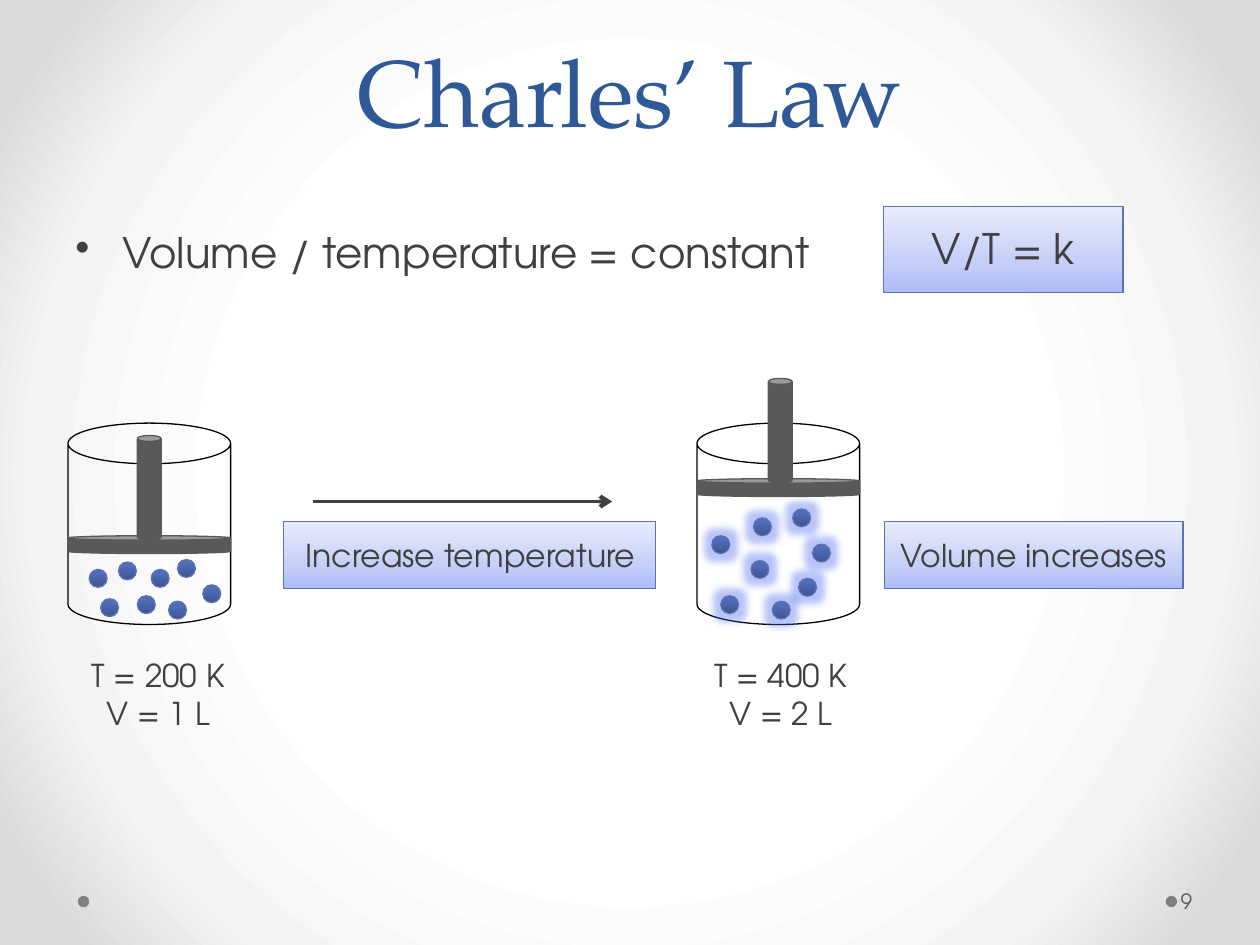
from dataclasses import dataclass

from lxml import etree
from pptx import Presentation
from pptx import util as u
from pptx.dml.color import RGBColor
from pptx.enum import shapes, text
from pptx.oxml.ns import nsdecls, qn


@dataclass(frozen=True)
class Theme:
    heading: str = "TeX Gyre Pagella"
    body: str = "TeX Gyre Adventor"
    title: str = "2F5897"
    ink: str = "404040"
    steel: str = "595959"
    dot: str = "808080"
    outline: str = "000000"
    edge: str = "5C72B2"
    glow: str = "4F6CF0"
    panel: tuple = ((0, "ADBBF6"), (35, "C5CFF8"), (100, "E8ECFD"))
    particle: tuple = ((0, "3E5490"), (80, "516DBB"), (100, "4F6CBE"))
    backdrop: tuple = ((50, "FFFFFF"), (76, "F4F4F4"), (92, "DADADA"))
    title_size: int = 54
    large: int = 24
    medium: int = 18
    small: int = 12


theme = Theme()
UPWARD = '<a:lin ang="16200000" scaled="0"/>'
RADIAL = '<a:path path="circle"><a:fillToRect l="50000" t="50000" r="50000" b="50000"/></a:path>'


def set_gradient(properties, stops, direction):
    """Replace the solid fill of a properties element with a gradient."""
    marks = "".join(
        f'<a:gs pos="{position * 1000}"><a:srgbClr val="{color}"/></a:gs>'
        for position, color in stops
    )
    gradient = etree.fromstring(
        f'<a:gradFill {nsdecls("a")} rotWithShape="1"><a:gsLst>{marks}</a:gsLst>{direction}</a:gradFill>'
    )
    properties.replace(properties.find(qn("a:solidFill")), gradient)


def draw(kind, left, top, width, height, fill=None, line=None):
    """Add a preset shape; fill is a colour, gradient stops or None."""
    shape = page.shapes.add_shape(kind, u.Cm(left), u.Cm(top), u.Cm(width), u.Cm(height))
    shape.shadow.inherit = False
    if fill is None:
        shape.fill.background()
    else:
        shape.fill.solid()
        if isinstance(fill, str):
            shape.fill.fore_color.rgb = RGBColor.from_string(fill)
        else:
            set_gradient(shape.element.spPr, fill, UPWARD)
    if line is None:
        shape.line.fill.background()
    else:
        shape.line.color.rgb = RGBColor.from_string(line)
        shape.line.width = u.Pt(0.75)
    return shape


deck = Presentation()
deck.slide_width, deck.slide_height = u.Cm(25.4), u.Cm(19.05)
page = deck.slides.add_slide(deck.slide_layouts[6])
page.background.fill.solid()
set_gradient(page.element.find(".//" + qn("p:bgPr")), theme.backdrop, RADIAL)

RECT = shapes.MSO_SHAPE.RECTANGLE
CAN = shapes.MSO_SHAPE.CAN
OVAL = shapes.MSO_SHAPE.OVAL

# Footer dots
for left in (23.5, 1.57):
    draw(OVAL, left, 18.06, 0.23, 0.23, theme.dot)

# Cylinders: left edge, piston plate top, rod left, heated, particle positions
cylinders = [
    (14.05, 9.65, 15.49, True,
     [(14.35, 10.8), (15.19, 10.44), (16.38, 10.97), (15.14, 11.3),
      (16.1, 11.66), (15.98, 10.26), (14.53, 12.01), (15.57, 12.12)]),
    (1.37, 10.8, 2.77, False,
     [(1.8, 11.48), (2.03, 12.07), (2.39, 11.33), (2.77, 12.01),
      (3.4, 12.12), (3.05, 11.48), (3.58, 11.28), (4.09, 11.79)]),
]
for left, plate_top, rod_left, heated, particles in cylinders:
    draw(CAN, left, 8.53, 3.28, 4.06, None, theme.outline)
    draw(CAN, left, plate_top, 3.28, 0.36, theme.steel, theme.steel)
    draw(CAN, rod_left, plate_top - 2.02, 0.48, 2.11, theme.steel, theme.steel)
    for x, y in particles:
        particle = draw(OVAL, x, y, 0.36, 0.36, theme.particle, theme.edge)
        if heated:
            effects = particle.element.spPr.find(qn("a:effectLst"))
            glow = etree.SubElement(effects, qn("a:glow"), rad=str(u.Cm(0.28)))
            color = etree.SubElement(glow, qn("a:srgbClr"), val=theme.glow)
            etree.SubElement(color, qn("a:alpha"), val="40000")

# Panels behind the formula and the two captions
for left, top, width, height in [
    (17.81, 4.17, 4.83, 1.73),
    (5.72, 10.52, 7.49, 1.35),
    (17.83, 10.52, 6.02, 1.35),
]:
    draw(RECT, left, top, width, height, theme.panel, theme.edge)

# Arrow from the cold to the heated cylinder
arrow = page.shapes.add_connector(
    shapes.MSO_CONNECTOR.STRAIGHT, u.Cm(6.3), u.Cm(10.11), u.Cm(12.34), u.Cm(10.11)
)
arrow.line.color.rgb = RGBColor.from_string(theme.ink)
arrow.line.width = u.Pt(2.25)
etree.SubElement(arrow.line._get_or_add_ln(), qn("a:tailEnd"), type="arrow")
etree.SubElement(arrow.element.spPr, qn("a:effectLst"))

# Text: wording, left, top, width, height, size, font, colour
labels = [
    ("Charles’ Law", 1.27, 0, 22.86, 3.07, theme.title_size, theme.heading, theme.title),
    ("Volume / temperature = constant", 1.27, 4.45, 22.86, 12.57, theme.large, theme.body, theme.ink),
    ("V/T = k", 17.81, 4.37, 4.83, 1.27, theme.large, theme.body, theme.ink),
    ("Increase temperature", 5.74, 10.69, 7.49, 1.02, theme.medium, theme.body, theme.ink),
    ("Volume increases", 17.83, 10.69, 6.02, 1.02, theme.medium, theme.body, theme.ink),
    ("T = 200 K\nV = 1 L", 1.27, 13.11, 3.84, 1.8, theme.medium, theme.body, theme.ink),
    ("T = 400 K\nV = 2 L", 13.82, 13.11, 3.84, 1.8, theme.medium, theme.body, theme.ink),
    ("9", 23.72, 17.65, 1.55, 1.02, theme.small, theme.body, theme.steel),
]
frames = []
for wording, left, top, width, height, size, font, color in labels:
    box = page.shapes.add_textbox(u.Cm(left), u.Cm(top), u.Cm(width), u.Cm(height))
    frame = box.text_frame
    frame.word_wrap = True
    frame.text = wording
    for para in frame.paragraphs:
        para.alignment = text.PP_ALIGN.CENTER
        for span in para.runs:
            span.font.name = font
            span.font.size = u.Pt(size)
            span.font.color.rgb = RGBColor.from_string(color)
    frames.append(frame)

title, statement, number = frames[0], frames[1], frames[-1]
title.vertical_anchor = text.MSO_ANCHOR.BOTTOM
title.paragraphs[0].line_spacing = u.Pt(58)

statement.paragraphs[0].alignment = text.PP_ALIGN.LEFT
bullet = statement.paragraphs[0]._p.get_or_add_pPr()
bullet.set("marL", str(u.Cm(0.95)))
bullet.set("indent", str(-u.Cm(0.95)))
etree.SubElement(bullet, qn("a:buChar"), char="•")

number.paragraphs[0].alignment = text.PP_ALIGN.LEFT
number.vertical_anchor = text.MSO_ANCHOR.MIDDLE
number.margin_left = u.Cm(0.08)
number.margin_right = u.Cm(0.13)

deck.save("out.pptx")
